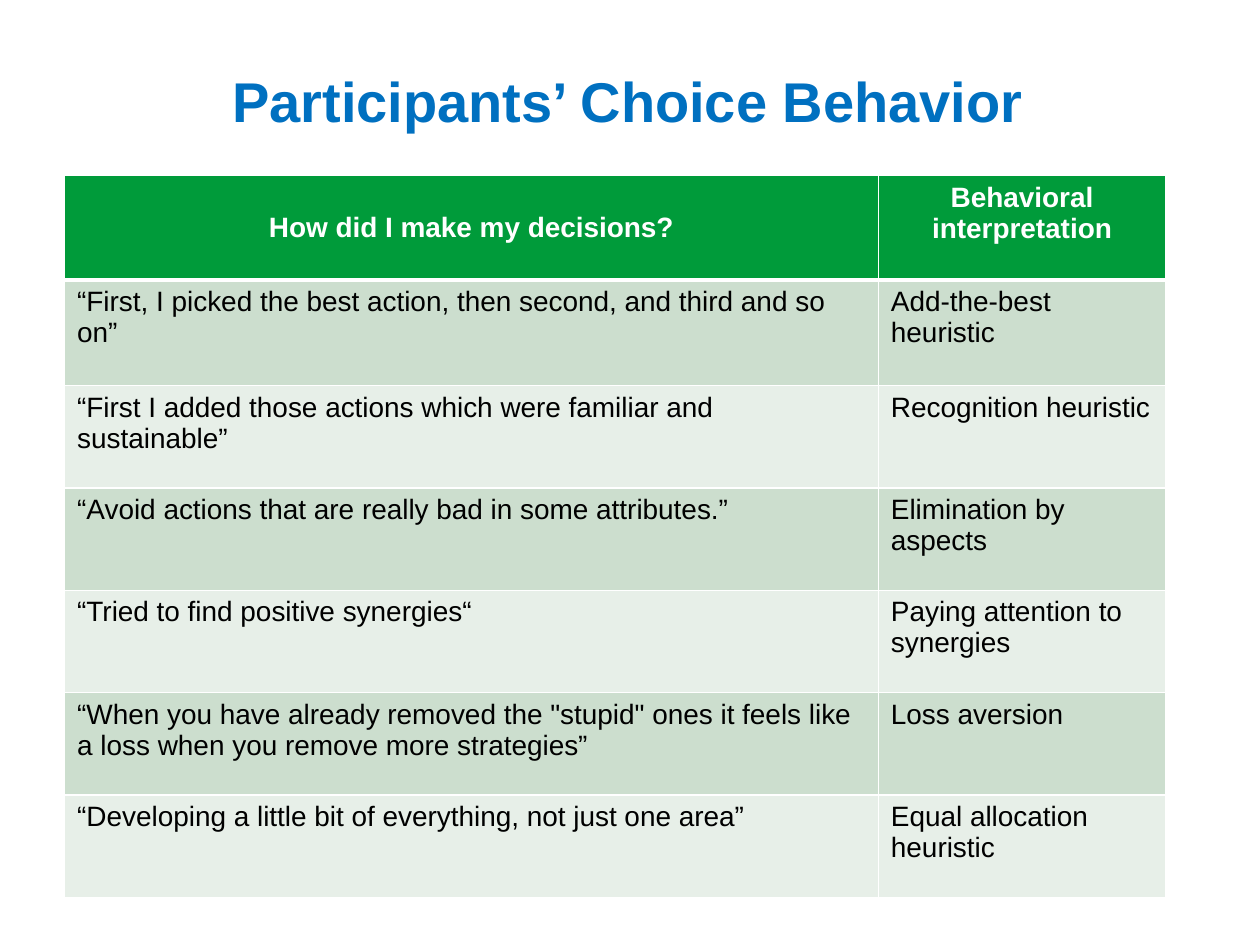
from lxml import etree
from pptx import Presentation
from pptx.dml.color import RGBColor
from pptx.enum.text import MSO_ANCHOR, PP_ALIGN
from pptx.oxml.ns import qn
from pptx.util import Pt

CENTER, LEFT = PP_ALIGN.CENTER, PP_ALIGN.LEFT
TOP, MIDDLE = MSO_ANCHOR.TOP, MSO_ANCHOR.MIDDLE
FONT = "Arial"
COLORS = {
    "title": "0070C0",
    "header": "009B3A",
    "band_dark": "CCDECE",
    "band_light": "E7EFE8",
    "white": "FFFFFF",
    "black": "000000",
}
HEADERS = ("How did I make my decisions?", "Behavioral interpretation")
ANSWERS = [
    ("“First, I picked the best action, then second, and third and so on”",
     "Add-the-best heuristic"),
    ("“First I added those actions which were familiar and sustainable”",
     "Recognition heuristic"),
    ("“Avoid actions that are really bad in some attributes.”",
     "Elimination by aspects"),
    ("“Tried to find positive synergies“", "Paying attention to synergies"),
    ("“When you have already removed the \"stupid\" ones it feels like "
     "a loss when you remove more strategies”", "Loss aversion"),
    ("“Developing a little bit of everything, not just one area”",
     "Equal allocation heuristic"),
]
COL_WIDTHS = (465, 164.3)
ROW_HEIGHTS = (59.5, 60.5) + (58.5,) * 5


def rgb(name):
    return RGBColor.from_string(COLORS[name])


def format_text(tf, size, color, bold, align):
    for p in tf.paragraphs:
        p.alignment = align
        for r in p.runs:
            r.font.name = FONT
            r.font.size = Pt(size)
            r.font.bold = bold
            r.font.color.rgb = rgb(color)


def set_borders(cell, top, bottom):
    """Draw white cell borders; top and bottom are widths in points."""
    tcPr = cell._tc.get_or_add_tcPr()
    widths = {"a:lnL": 1, "a:lnR": 1, "a:lnT": top, "a:lnB": bottom}
    for i, (tag, width) in enumerate(widths.items()):
        ln = etree.Element(qn(tag), w=str(Pt(width)))
        fill = etree.SubElement(ln, qn("a:solidFill"))
        etree.SubElement(fill, qn("a:srgbClr"), val=COLORS["white"])
        tcPr.insert(i, ln)


def fill_cell(cell, text, row):
    header = row == 0
    band = "band_dark" if row % 2 else "band_light"
    cell.text_frame.text = text
    format_text(cell.text_frame, 16, "white" if header else "black",
                header, CENTER if header else LEFT)
    cell.fill.solid()
    cell.fill.fore_color.rgb = rgb("header" if header else band)
    set_borders(cell, 3 if row == 1 else 1, 3 if header else 1)


def add_title(s, text):
    sp = s.shapes.title
    sp.left, sp.top, sp.width, sp.height = Pt(44.6), Pt(38.2), Pt(628.6), Pt(85)
    tf = sp.text_frame
    tf.margin_left = tf.margin_right = tf.margin_top = tf.margin_bottom = 0
    tf.vertical_anchor = TOP
    tf.word_wrap = True
    tf.text = text
    format_text(tf, 32, "title", True, CENTER)


def add_answer_table(s):
    rows = [HEADERS] + ANSWERS
    table = s.shapes.add_table(
        len(rows), len(COL_WIDTHS), Pt(36.9), Pt(100.4),
        Pt(sum(COL_WIDTHS)), Pt(sum(ROW_HEIGHTS))).table
    for col, width in zip(table.columns, COL_WIDTHS):
        col.width = Pt(width)
    for i, (texts, height) in enumerate(zip(rows, ROW_HEIGHTS)):
        table.rows[i].height = Pt(height)
        for j, text in enumerate(texts):
            fill_cell(table.cell(i, j), text, i)
    table.cell(0, 0).vertical_anchor = MIDDLE


def main():
    prs = Presentation()
    prs.slide_width, prs.slide_height = Pt(720), Pt(540)
    s = prs.slides.add_slide(prs.slide_layouts[5])
    add_title(s, "Participants’ Choice Behavior")
    add_answer_table(s)
    prs.save("out.pptx")


if __name__ == "__main__":
    main()
